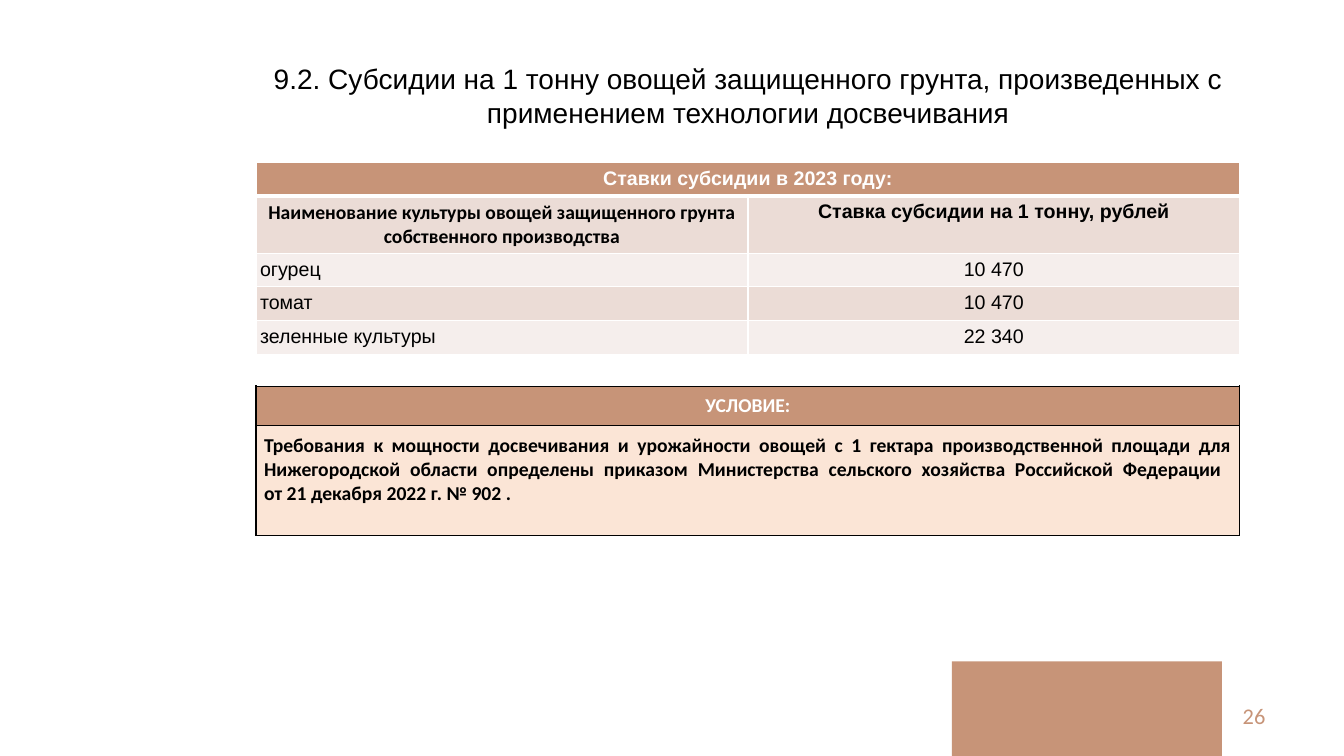
from pptx import Presentation
from pptx import util as u
from pptx.dml.color import RGBColor
from pptx.enum import shapes, text
from pptx.oxml import parse_xml
from pptx.oxml.ns import nsdecls

CENTER, JUSTIFY, RIGHT = (
    text.PP_ALIGN.CENTER, text.PP_ALIGN.JUSTIFY, text.PP_ALIGN.RIGHT)
TOP, MIDDLE = text.MSO_ANCHOR.TOP, text.MSO_ANCHOR.MIDDLE


def color(value):
    return RGBColor.from_string(value)


class Deck:
    accent, black, white = "C79478", "000000", "FFFFFF"
    bands = "F5EEEC", "EBDCD6"
    peach = "FBE5D6"

    def __init__(self):
        self.prs = Presentation()
        self.prs.slide_width = u.Inches(13.33)
        self.prs.slide_height = u.Inches(7.5)
        self.s = self.prs.slides.add_slide(self.prs.slide_layouts[5])

    def x(self, percent):
        return round(self.prs.slide_width * percent / 100)

    def y(self, percent):
        return round(self.prs.slide_height * percent / 100)

    def box(self, left, top, width, height):
        return self.x(left), self.y(top), self.x(width), self.y(height)

    def set_text(self, tf, words, size=14, font="Arial", ink=black, bold=False,
                 align=CENTER, anchor=TOP):
        tf.text = words
        tf.word_wrap = True
        tf.vertical_anchor = anchor
        p = tf.paragraphs[0]
        p.alignment = align
        for r in p.runs:
            r.font.size, r.font.name, r.font.bold = u.Pt(size), font, bold
            r.font.color.rgb = color(ink)

    def title(self, words, *place):
        sp = self.s.shapes.title
        sp.left, sp.top, sp.width, sp.height = self.box(*place)
        self.set_text(sp.text_frame, words, size=20)

    def label(self, words, *place, **style):
        sp = self.s.shapes.add_textbox(*self.box(*place))
        self.set_text(sp.text_frame, words, **style)

    def block(self, fill, *place):
        sp = self.s.shapes.add_shape(shapes.MSO_SHAPE.RECTANGLE, *self.box(*place))
        sp.shadow.inherit = False
        sp.fill.solid()
        sp.fill.fore_color.rgb = color(fill)
        sp.line.fill.background()

    def table(self, left, top, widths, heights):
        frame = self.s.shapes.add_table(
            len(heights), len(widths),
            *self.box(left, top, sum(widths), sum(heights)))
        table = frame.table
        table.first_row = table.horz_banding = False
        for column, width in zip(table.columns, widths):
            column.width = self.x(width)
        for row, height in zip(table.rows, heights):
            row.height = self.y(height)
        return table

    def cell(self, cell, words, fill, border, margins, top=1, bottom=1, **style):
        side, edge = (u.Inches(m) for m in margins)
        cell.margin_left = cell.margin_right = side
        cell.margin_top = cell.margin_bottom = edge
        self.set_text(cell.text_frame, words, **style)
        cell.vertical_anchor = style.get("anchor", TOP)
        cell.fill.solid()
        cell.fill.fore_color.rgb = color(fill)
        tc_pr = cell._tc.get_or_add_tcPr()
        for i, (name, width) in enumerate(
                (("lnL", 1), ("lnR", 1), ("lnT", top), ("lnB", bottom))):
            tc_pr.insert(i, parse_xml(
                f'<a:{name} {nsdecls("a")} w="{u.Pt(width)}"><a:solidFill>'
                f'<a:srgbClr val="{border}"/></a:solidFill></a:{name}>'))


def add_rates(deck, left, width):
    rows = [
        ("Ставки субсидии в 2023 году:", ""),
        ("Наименование культуры овощей защищенного грунта собственного производства",
         "Ставка субсидии на 1 тонну, рублей"),
        ("огурец", "10 470"),
        ("томат", "10 470"),
        ("зеленные культуры", "22 340"),
    ]
    table = deck.table(left, 21.47, [width / 2] * 2, [4.4, 7.45] + [4.45] * 3)
    table.cell(0, 0).merge(table.cell(0, 1))
    for i, row in enumerate(rows):
        for j, words in enumerate(row):
            deck.cell(
                table.cell(i, j), words,
                fill=deck.bands[i % 2] if i else deck.accent,
                border=deck.white,
                margins=(0.04, 0.05) if i else (0.1, 0.05),
                top=3 if i == 1 else 1,
                bottom=1 if i else 3,
                ink=deck.black if i else deck.white,
                font="Calibri" if (i, j) == (1, 0) else "Arial",
                bold=i < 2,
                align=JUSTIFY if i > 1 and j == 0 else CENTER)


def add_condition(deck, left, width):
    table = deck.table(left, 51.07, [width], [5.2, 14.53])
    style = dict(border=deck.black, margins=(0.08, 0.08), font="Calibri", bold=True)
    deck.cell(table.cell(0, 0), "УСЛОВИЕ:", deck.accent, ink=deck.white,
              anchor=MIDDLE, **style)
    deck.cell(
        table.cell(1, 0),
        "Требования к мощности досвечивания и урожайности овощей с 1 гектара "
        "производственной площади для Нижегородской области определены приказом "
        "Министерства сельского хозяйства Российской Федерации \v"
        "от 21 декабря 2022 г. № 902 .",
        deck.peach, align=JUSTIFY, **style)


def main():
    deck = Deck()
    left, width = 19.05, 73.2
    deck.block(deck.accent, 70.82, 87.47, 20.1, 12.53)
    deck.label("26", 72.39, 92, 22.5, 5.33, size=16, font="Calibri",
               ink=deck.accent, align=RIGHT, anchor=MIDDLE)
    deck.title("9.2. Субсидии на 1 тонну овощей защищенного грунта, "
               "произведенных с применением технологии досвечивания",
               15.75, 7.47, 79.82, 10.27)
    add_condition(deck, left, width)
    add_rates(deck, left, width)
    deck.prs.save("out.pptx")


if __name__ == "__main__":
    main()
